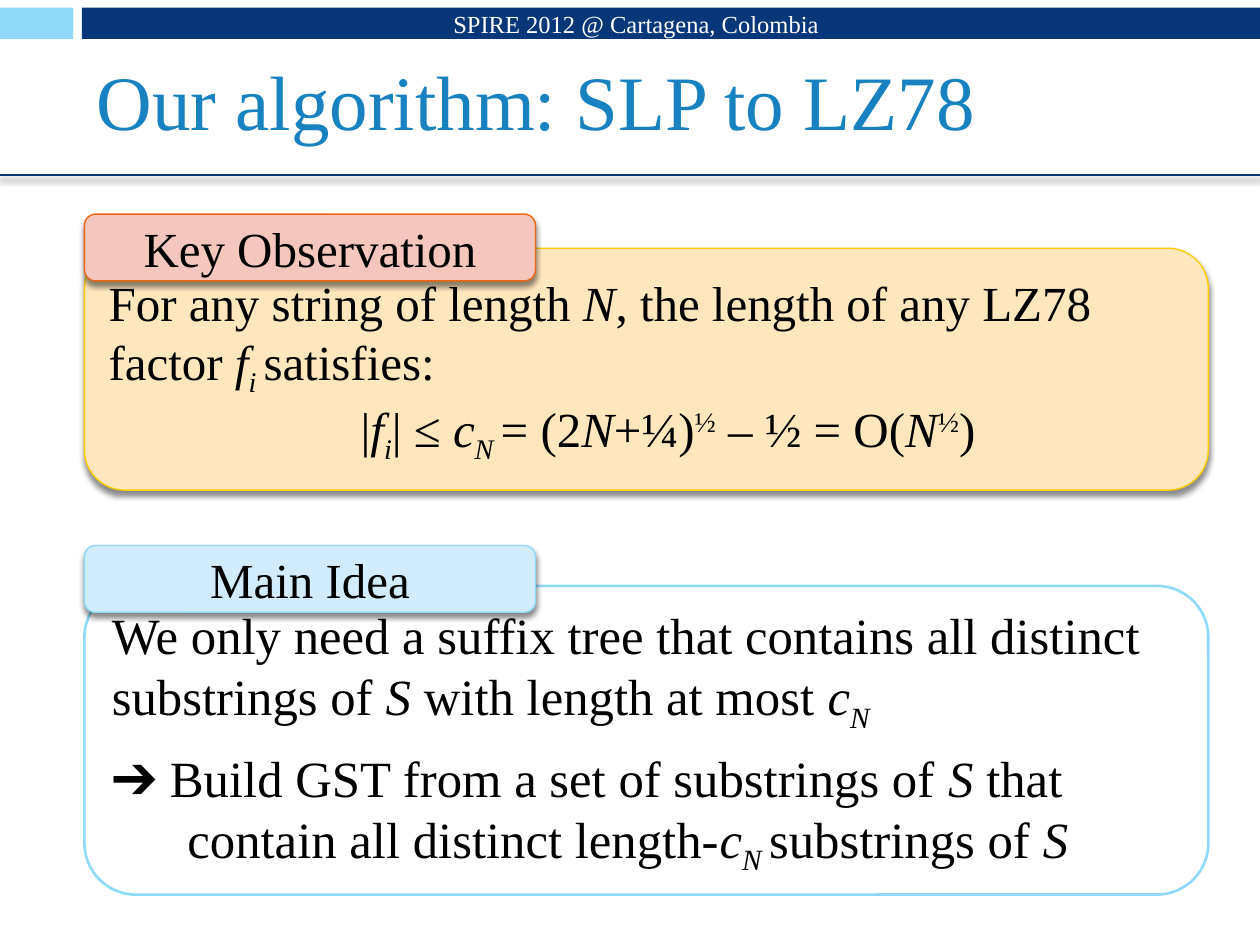
from dataclasses import dataclass

from lxml import etree
from pptx import Presentation
from pptx.dml.color import RGBColor
from pptx.enum import shapes, text
from pptx.oxml import ns
from pptx.util import Inches, Pt


@dataclass(frozen=True)
class Theme:
    font: str = "Times New Roman"
    navy: str = "073779"
    sky: str = "8FD9FB"
    pale_sky: str = "D1EDFD"
    title: str = "1782BF"
    cream: str = "FFE7BD"
    gold: str = "FFCC00"
    rose: str = "F5C6BD"
    orange: str = "EB6615"
    white: str = "FFFFFF"
    black: str = "000000"
    title_size: float = 44
    idea_size: float = 29
    body_size: float = 28
    header_size: float = 14
    thick: float = 1.5
    thin: float = 0.79


THEME = Theme()
BASELINES = {"sub": "-25000", "super": "30000"}


def add_shadow(shape):
    effects = etree.SubElement(shape._element.spPr, ns.qn("a:effectLst"))
    shadow = etree.SubElement(effects, ns.qn("a:outerShdw"), blurRad=str(Pt(3)),
                              dist=str(Pt(2.4)), dir="5400000", rotWithShape="0")
    color = etree.SubElement(shadow, ns.qn("a:srgbClr"), val=THEME.black)
    etree.SubElement(color, ns.qn("a:alpha"), val="45000")


def add_runs(paragraph, runs, size, color=THEME.black):
    """Each run is (text, styles); a None entry is a line break."""
    for entry in runs:
        if entry is None:
            paragraph.add_line_break()
            continue
        wording, styles = entry
        run = paragraph.add_run()
        run.text = wording
        run.font.name = THEME.font
        run.font.size = Pt(size)
        run.font.color.rgb = RGBColor.from_string(color)
        for style in styles.split():
            if style == "italic":
                run.font.italic = True
            else:
                run.font._element.set("baseline", BASELINES[style])


def add_box(slide, kind, box, fill, line=None, width=0, shadow=False):
    shape = slide.shapes.add_shape(kind, *map(Inches, box))
    shape.fill.solid()
    shape.fill.fore_color.rgb = RGBColor.from_string(fill)
    if line:
        shape.line.color.rgb = RGBColor.from_string(line)
        shape.line.width = Pt(width)
    else:
        shape.line.fill.background()
    if shadow:
        add_shadow(shape)
    else:
        shape.shadow.inherit = False
    return shape


def write(shape, paragraphs, size, color=THEME.black,
          align=text.PP_ALIGN.LEFT, space=0):
    """Each paragraph is (runs, left margin, first-line indent) in inches."""
    frame = shape.text_frame
    frame.word_wrap = True
    frame.vertical_anchor = text.MSO_ANCHOR.MIDDLE
    for index, (runs, margin, indent) in enumerate(paragraphs):
        paragraph = frame.add_paragraph() if index else frame.paragraphs[0]
        paragraph.alignment = align
        paragraph.space_before = Pt(space)
        properties = paragraph._p.get_or_add_pPr()
        properties.set("marL", str(Inches(margin)))
        properties.set("indent", str(Inches(indent)))
        add_runs(paragraph, runs, size, color)


def add_label(slide, box, wording, size, color, align):
    label = slide.shapes.add_textbox(*map(Inches, box))
    write(label, [([(wording, "")], 0, 0)], size, color, align)


def add_header(slide, left, top, width, height):
    # Two-colour band with the venue, then the title and its rule
    square, gap = 0.58, 0.07
    bar = square + gap
    rectangle = shapes.MSO_SHAPE.RECTANGLE
    add_box(slide, rectangle, (left, top + 0.06, square, 0.25), THEME.sky)
    add_box(slide, rectangle, (left + bar, top + 0.06, width - bar, 0.25), THEME.navy)
    bottom = Inches(top + height)
    rule = slide.shapes.add_connector(shapes.MSO_CONNECTOR.STRAIGHT,
                                      Inches(left), bottom, Inches(left + width), bottom)
    rule.line.color.rgb = RGBColor.from_string(THEME.navy)
    rule.line.width = Pt(THEME.thick)
    add_shadow(rule)
    add_label(slide, (left + 0.67, top + 0.25, 8.92, 1.08), "Our algorithm: SLP to LZ78",
              THEME.title_size, THEME.title, text.PP_ALIGN.LEFT)
    add_label(slide, (left + 0.67, top - 0.01, 5.93, 0.4), "SPIRE 2012 @ Cartagena, Colombia",
              THEME.header_size, THEME.white, text.PP_ALIGN.RIGHT)


def add_panel(slide, box, tab_top, heading, paragraphs, size, space,
              body_style, tab_style):
    # Rounded panel with a heading tab over its top left corner
    rounded = shapes.MSO_SHAPE.ROUNDED_RECTANGLE
    body = add_box(slide, rounded, box, *body_style)
    write(body, paragraphs, size, space=space)
    tab = add_box(slide, rounded, (box[0], tab_top, 3.58, 0.53), *tab_style)
    write(tab, [([(heading, "")], 0, 0)], THEME.body_size, align=text.PP_ALIGN.CENTER)


OBSERVATION = [
    ([("For any string of length ", ""), ("N", "italic"),
      (", the length of any LZ78 factor ", ""), ("f", "italic"),
      ("i ", "italic sub"), ("satisfies:", "")], 0, 0),
    ([("|", ""), ("f", "italic"), ("i", "italic sub"), ("| ≤ ", ""),
      ("c", "italic"), ("N ", "italic sub"), ("= (2", ""), ("N", "italic"),
      ("+¼)", ""), ("½", "super"), (" – ½ = O(", ""), ("N", "italic"),
      ("½", "super"), (")", "")], 2, 0),
]
IDEA = [
    ([("We only need a suffix tree that contains all distinct substrings of ", ""),
      ("S", "italic"), (" with length at most ", ""), ("c", "italic"),
      ("N", "italic sub")], 0, 0),
    ([("➔ Build GST from a set of substrings of ", ""), ("S", "italic"),
      (" that", ""), None, ("contain all distinct length-", ""), ("c", "italic"),
      ("N ", "italic sub"), ("substrings of", ""), (" S", "italic")], 0.6, -0.6),
]


def main():
    presentation = Presentation()
    presentation.slide_width, presentation.slide_height = Inches(10), Inches(7.5)
    slide = presentation.slides.add_slide(presentation.slide_layouts[6])

    add_header(slide, 0, 0, 10, 1.39)
    add_panel(slide, (0.67, 4.65, 8.92, 2.45), 4.33, "Main Idea",
              IDEA, THEME.idea_size, 7,
              (THEME.white, THEME.sky, THEME.thick),
              (THEME.pale_sky, THEME.sky, THEME.thin, True))
    add_panel(slide, (0.67, 1.97, 8.92, 1.92), 1.7, "Key Observation",
              OBSERVATION, THEME.body_size, 0,
              (THEME.cream, THEME.gold, THEME.thin, True),
              (THEME.rose, THEME.orange, THEME.thin, True))

    presentation.save("out.pptx")


if __name__ == "__main__":
    main()
